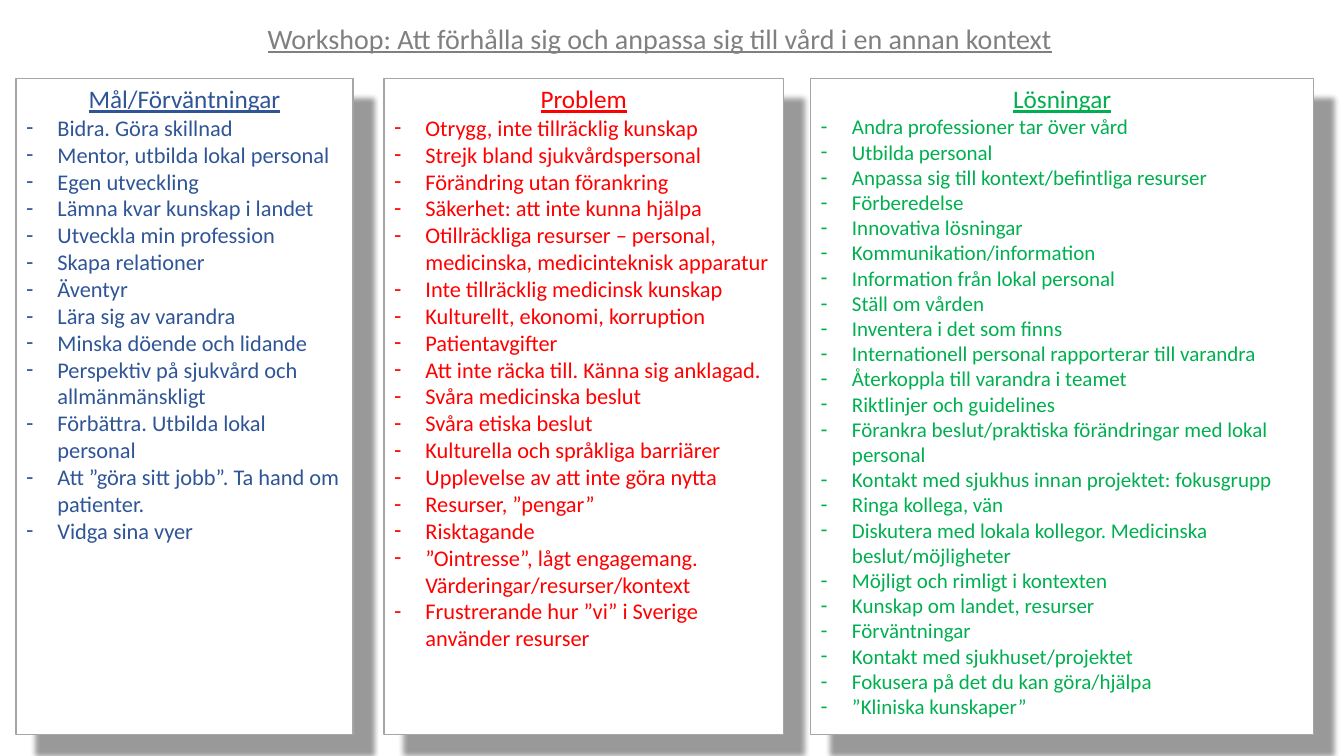
"""Build the workshop slide with goals, problems and solutions in three panels."""
from lxml.etree import SubElement
from pptx import Presentation
from pptx.dml.color import RGBColor
from pptx.enum.text import MSO_ANCHOR, MSO_AUTO_SIZE, PP_ALIGN
from pptx.oxml import parse_xml
from pptx.oxml.ns import nsdecls, qn
from pptx.util import Inches, Pt

WHITE = RGBColor(0xFF, 0xFF, 0xFF)
GRAY = RGBColor(0x80, 0x80, 0x80)
BORDER = RGBColor(0xA6, 0xA6, 0xA6)
BLUE = RGBColor(0x2F, 0x55, 0x97)
RED = RGBColor(0xFF, 0x00, 0x00)
GREEN = RGBColor(0x00, 0xB0, 0x50)
FONT = "Calibri"
SHADOW = (
    f'<a:effectLst {nsdecls("a")}><a:outerShdw blurRad="{Pt(4)}" dist="{Pt(20)}" '
    'dir="2700000" algn="tl" rotWithShape="0"><a:srgbClr val="000000">'
    '<a:alpha val="40000"/></a:srgbClr></a:outerShdw></a:effectLst>'
)

PANELS = [
    ("Mål/Förväntningar", 0.16, 3.34, BLUE, 16, [
        "Bidra. Göra skillnad",
        "Mentor, utbilda lokal personal",
        "Egen utveckling",
        "Lämna kvar kunskap i landet",
        "Utveckla min profession",
        "Skapa relationer",
        "Äventyr",
        "Lära sig av varandra",
        "Minska döende och lidande",
        "Perspektiv på sjukvård och allmänmänskligt",
        "Förbättra. Utbilda lokal personal",
        "Att ”göra sitt jobb”. Ta hand om patienter.",
        "Vidga sina vyer",
    ]),
    ("Problem", 3.81, 3.96, RED, 16, [
        "Otrygg, inte tillräcklig kunskap",
        "Strejk bland sjukvårdspersonal",
        "Förändring utan förankring",
        "Säkerhet: att inte kunna hjälpa",
        "Otillräckliga resurser – personal, medicinska, medicinteknisk apparatur",
        "Inte tillräcklig medicinsk kunskap",
        "Kulturellt, ekonomi, korruption",
        "Patientavgifter",
        "Att inte räcka till. Känna sig anklagad.",
        "Svåra medicinska beslut",
        "Svåra etiska beslut",
        "Kulturella och språkliga barriärer",
        "Upplevelse av att inte göra nytta",
        "Resurser, ”pengar”",
        "Risktagande",
        "”Ointresse”, lågt engagemang. Värderingar/resurser/kontext",
        "Frustrerande hur ”vi” i Sverige använder resurser",
    ]),
    ("Lösningar", 8.04, 4.99, GREEN, 15, [
        "Andra professioner tar över vård",
        "Utbilda personal",
        "Anpassa sig till kontext/befintliga resurser",
        "Förberedelse",
        "Innovativa lösningar",
        "Kommunikation/information",
        "Information från lokal personal",
        "Ställ om vården",
        "Inventera i det som finns",
        "Internationell personal rapporterar till varandra",
        "Återkoppla till varandra i teamet",
        "Riktlinjer och guidelines",
        "Förankra beslut/praktiska förändringar med lokal personal",
        "Kontakt med sjukhus innan projektet: fokusgrupp",
        "Ringa kollega, vän",
        "Diskutera med lokala kollegor. Medicinska beslut/möjligheter",
        "Möjligt och rimligt i kontexten",
        "Kunskap om landet, resurser",
        "Förväntningar",
        "Kontakt med sjukhuset/projektet",
        "Fokusera på det du kan göra/hjälpa",
        "”Kliniska kunskaper”",
    ]),
]


def add_text(p, text, size, color, bullet=None):
    indent = Inches(0.31) if bullet else 0
    pPr = p._p.get_or_add_pPr()
    pPr.set("marL", str(indent))
    pPr.set("indent", str(-indent))
    if bullet:
        SubElement(pPr, qn("a:buFontTx"))
        SubElement(pPr, qn("a:buChar"), char=bullet)
    else:
        SubElement(pPr, qn("a:buNone"))
    p.alignment = PP_ALIGN.LEFT if bullet else PP_ALIGN.CENTER
    p.space_before = Pt(0)
    r = p.add_run()
    r.text = text
    r.font.name = FONT
    r.font.size = Pt(size)
    r.font.bold = False
    r.font.underline = not bullet
    r.font.color.rgb = color


def place(sp, left, top, width, height, anchor):
    sp.left, sp.top = Inches(left), Inches(top)
    sp.width, sp.height = Inches(width), Inches(height)
    tf = sp.text_frame
    tf.word_wrap = True
    tf.auto_size = MSO_AUTO_SIZE.NONE
    tf.vertical_anchor = anchor
    return tf


prs = Presentation()
prs.slide_width, prs.slide_height = Inches(13.33), Inches(7.5)
s = prs.slides.add_slide(prs.slide_layouts.get_by_name("Comparison"))

tf = place(s.shapes.title, 0.16, 0.12, 12.77, 0.51, MSO_ANCHOR.MIDDLE)
add_text(tf.paragraphs[0],
         "Workshop: Att förhålla sig och anpassa sig till vård i en annan kontext",
         size=20, color=GRAY)

title, *bodies = s.placeholders
for sp, (heading, left, width, color, size, items) in zip(bodies, PANELS):
    tf = place(sp, left, 0.78, width, 6.51, MSO_ANCHOR.TOP)
    sp.fill.solid()
    sp.fill.fore_color.rgb = WHITE
    sp.line.color.rgb = BORDER
    sp.line.width = Pt(1)
    sp._element.spPr.append(parse_xml(SHADOW))
    add_text(tf.paragraphs[0], heading, size=18, color=color)
    for item in items:
        add_text(tf.add_paragraph(), item, size=size, color=color, bullet="-")

for sp in bodies[len(PANELS):]:
    sp._element.getparent().remove(sp._element)

prs.save("out.pptx")
